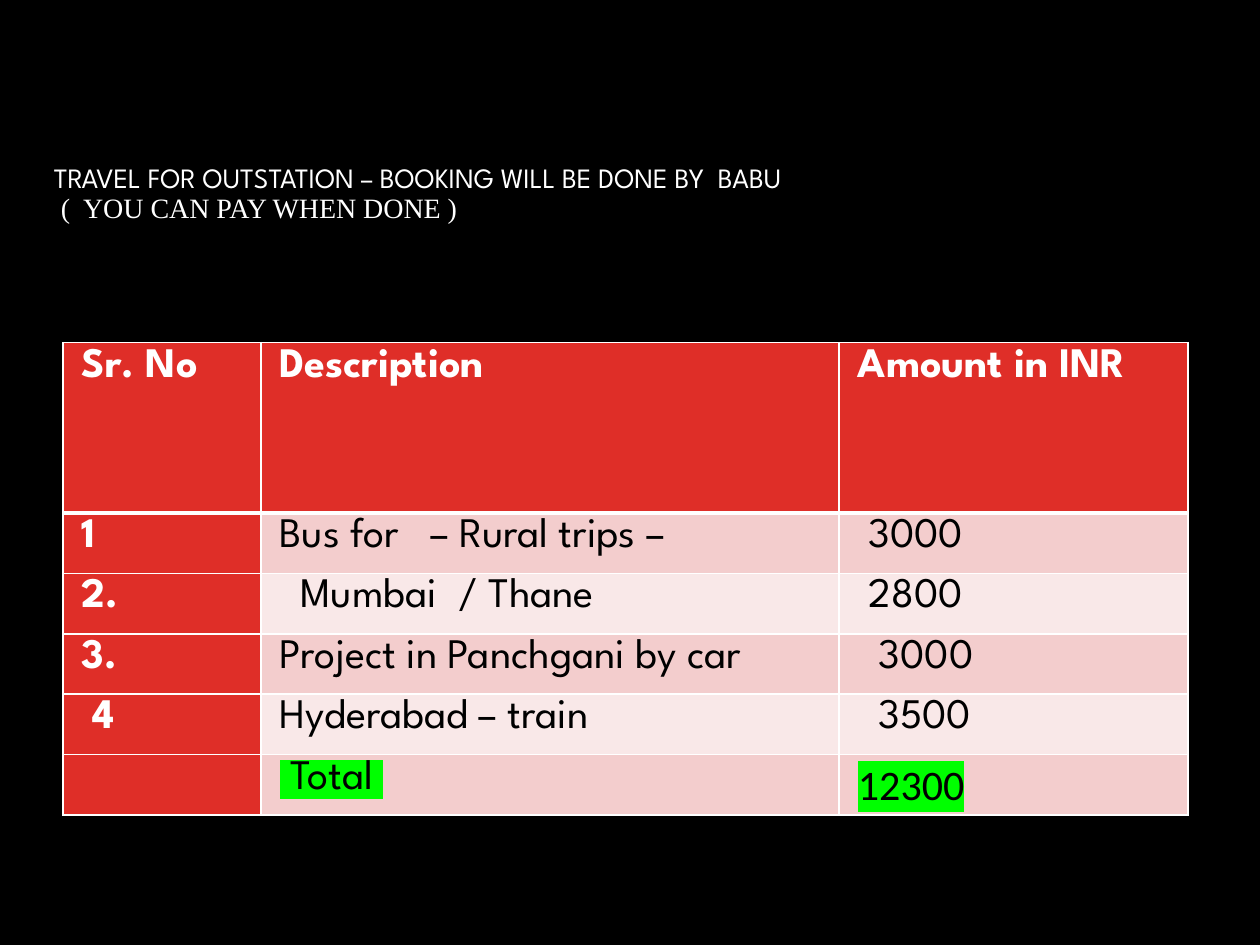
from copy import deepcopy

from lxml import etree
from pptx import Presentation, util as u
from pptx.dml.color import RGBColor
from pptx.enum import text
from pptx.oxml import ns

WHITE, BLACK, RED, LIME = "FFFFFF", "000000", "DF2E28", "00FF00"
BANDS = ("F3CDCD", "F9E8E8")
SANS = "League Spartan"
COLS = (1.57, 4.59, 2.77)
HEAD, ROW = 1.35, 0.48
ROWS = (
    ("Sr. No", "Description", "Amount in INR"),
    ("1", "Bus for   – Rural trips –", " 3000"),
    ("2.", "  Mumbai  / Thane", " 2800"),
    ("3.", "Project in Panchgani by car", "  3000"),
    ("\u00a04", "Hyderabad – train", "  3500"),
    ("", "\u00a0Total ", "12300"),
)


def paint(fill, color):
    fill.solid()
    fill.fore_color.rgb = RGBColor.from_string(color)


def style(run, size, face, color, bold=False):
    font = run.font
    font.size, font.name, font.bold = u.Pt(size), face, bold
    paint(font.fill, color)


def mark(run, color):
    """Highlight a run; the element belongs right after its fill."""
    light = etree.Element(ns.qn("a:highlight"))
    etree.SubElement(light, ns.qn("a:srgbClr"), val=color)
    run.font._element.find(ns.qn("a:solidFill")).addnext(light)


def edge(cell, side, width):
    line = etree.SubElement(cell._tc.get_or_add_tcPr(), ns.qn("a:ln" + side),
                            w=str(u.Pt(width)))
    fill = etree.SubElement(line, ns.qn("a:solidFill"))
    etree.SubElement(fill, ns.qn("a:srgbClr"), val=WHITE)


def title(slide):
    box = slide.shapes.add_textbox(u.Inches(0.33), u.Inches(0.84),
                                   u.Inches(9.1), u.Inches(1.41))
    frame = box.text_frame
    frame.word_wrap = True
    frame.vertical_anchor = text.MSO_ANCHOR.MIDDLE
    para = frame.paragraphs[0]
    para.text = ("TRAVEL FOR OUTSTATION – BOOKING WILL BE DONE BY  BABU\v"
                 " (  YOU CAN PAY WHEN DONE )")
    para.line_spacing = 0.9
    for run, face in zip(para.runs, (SANS, "Times New Roman")):
        style(run, 16, face, WHITE)
    # The line break takes the size of the first line
    para._p.find(ns.qn("a:br")).append(deepcopy(para.runs[0].font._element))


def fill_cell(cell, words, row, col):
    head = row == 0 or col == 0
    # Borders come before the fill; a thick rule parts head and body
    for side in "LRTB":
        thick = (row, side) in ((0, "B"), (1, "T"))
        edge(cell, side, 3 if thick else 1)
    paint(cell.fill, RED if head else BANDS[(row - 1) % 2])
    cell.margin_left = cell.margin_right = u.Inches(0.15)
    cell.margin_top, cell.margin_bottom = u.Inches(0.02), 0
    para = cell.text_frame.paragraphs[0]
    para.text = words
    para.line_spacing, para.space_after = 1.07, u.Pt(8)
    last = row == len(ROWS) - 1
    for run in para.runs:
        face = "Calibri" if last and col == 2 else SANS
        style(run, 24, face, WHITE if head else BLACK, head)
        if last:
            mark(run, LIME)


def costs(slide):
    high = HEAD + ROW * (len(ROWS) - 1)
    table = slide.shapes.add_table(
        len(ROWS), len(COLS), u.Inches(0.5), u.Inches(2.72),
        u.Inches(sum(COLS)), u.Inches(high)).table
    for col, wide in zip(table.columns, COLS):
        col.width = u.Inches(wide)
    for r, row in enumerate(ROWS):
        table.rows[r].height = u.Inches(ROW if r else HEAD)
        for c, words in enumerate(row):
            fill_cell(table.cell(r, c), words, r, c)


def main():
    deck = Presentation()
    deck.slide_width, deck.slide_height = u.Inches(10), u.Inches(7.5)
    slide = deck.slides.add_slide(deck.slide_layouts[6])
    paint(slide.background.fill, BLACK)
    title(slide)
    costs(slide)
    deck.save("out.pptx")


if __name__ == "__main__":
    main()
